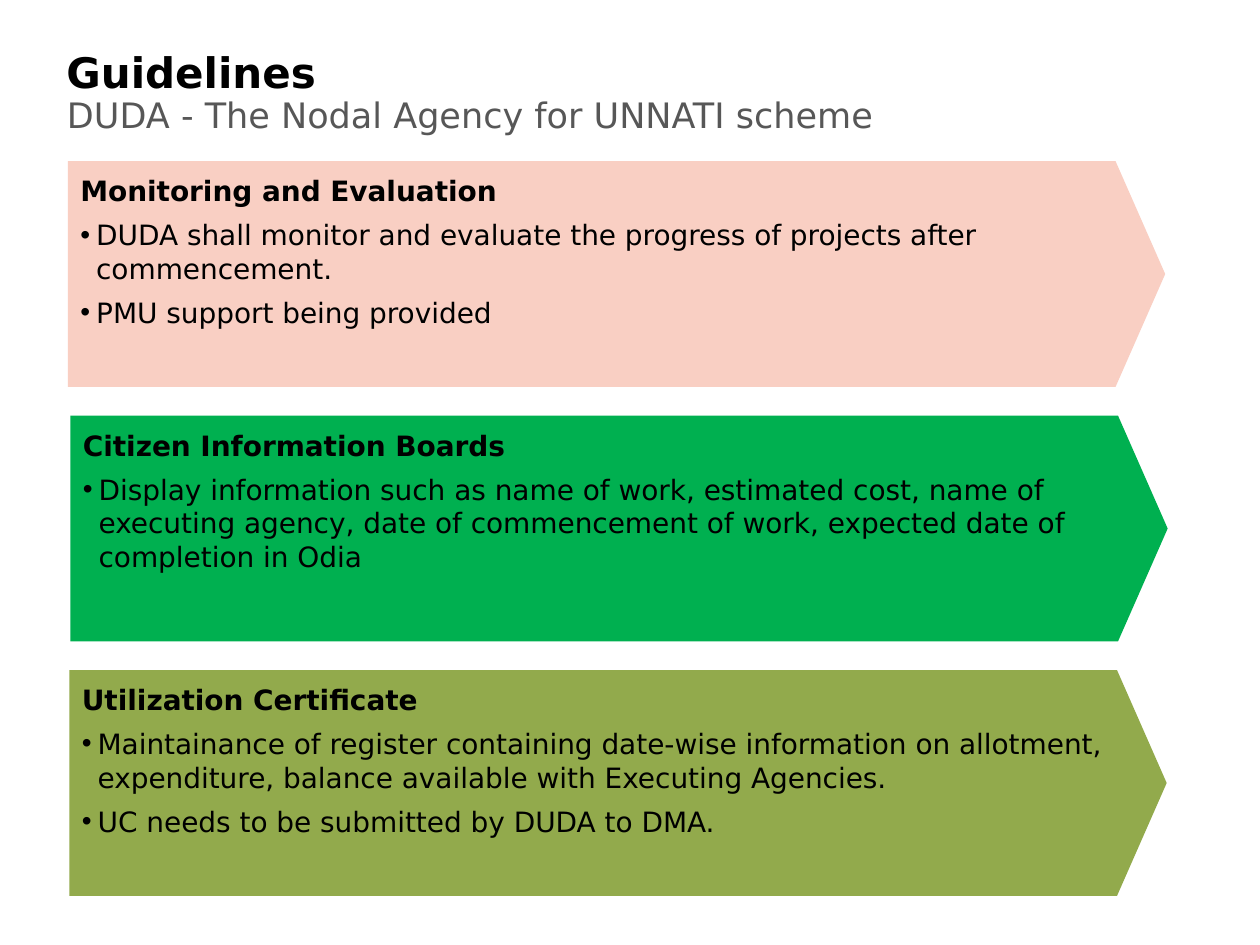
from lxml.etree import SubElement
from pptx import Presentation
from pptx.dml.color import RGBColor
from pptx.enum.shapes import MSO_SHAPE as Shape
from pptx.enum.text import MSO_ANCHOR as Anchor, MSO_AUTO_SIZE as AutoSize, PP_ALIGN as Align
from pptx.oxml.ns import qn
from pptx.util import Cm, Pt

FONT = "DejaVu Sans"
BLACK = RGBColor(0x00, 0x00, 0x00)
GREY = RGBColor(0x57, 0x57, 0x57)
PINK = RGBColor(0xF9, 0xCF, 0xC3)
GREEN = RGBColor(0x00, 0xB0, 0x50)
OLIVE = RGBColor(0x92, 0xAA, 0x4C)

ARROW_TOP = 3.25
ARROW_PITCH = 5.13
ARROWS = [
    (1.37, PINK, "Monitoring and Evaluation", [
        "DUDA shall monitor and evaluate the progress of projects after commencement.",
        "PMU support being provided",
    ]),
    (1.42, GREEN, "Citizen Information Boards", [
        "Display information such as name of work, estimated cost, name of executing agency, "
        "date of commencement of work, expected date of completion in Odia",
    ]),
    (1.4, OLIVE, "Utilization Certificate", [
        "Maintainance of register containing date-wise information on allotment, expenditure, "
        "balance available with Executing Agencies.",
        "UC needs to be submitted by DUDA to DMA.",
    ]),
]


def add_span(para, text, size, color=BLACK, bold=False):
    para.alignment = Align.LEFT
    span = para.add_run()
    span.text = text
    span.font.name = FONT
    span.font.size = Pt(size)
    span.font.bold = bold
    span.font.color.rgb = color


def set_frame(frame, side, upright):
    frame.word_wrap = True
    frame.auto_size = AutoSize.NONE
    frame.vertical_anchor = Anchor.TOP
    frame.margin_left = frame.margin_right = Cm(side)
    frame.margin_top = frame.margin_bottom = Cm(upright)


def add_bullet(para):
    properties = para._p.get_or_add_pPr()
    properties.set("marL", str(Cm(0.32)))
    properties.set("indent", str(Cm(-0.32)))
    SubElement(properties, qn("a:buFont"), typeface="Arial")
    SubElement(properties, qn("a:buChar"), char="•")


def format_title(page, text):
    title = page.shapes.title
    title.left, title.top, title.width, title.height = Cm(1.09), Cm(0.81), Cm(23.2), Cm(1.3)
    set_frame(title.text_frame, 0.25, 0.13)
    add_span(title.text_frame.paragraphs[0], text, 24, bold=True)


def add_subtitle(page, text):
    box = page.shapes.add_textbox(Cm(1.35), Cm(1.88), Cm(23.2), Cm(2.1))
    set_frame(box.text_frame, 0, 0)
    add_span(box.text_frame.paragraphs[0], text, 20, GREY)


def add_arrow(page, left, top, color, heading, points):
    arrow = page.shapes.add_shape(Shape.PENTAGON, Cm(left), Cm(top), Cm(22.12), Cm(4.55))
    arrow.adjustments[0] = 0.22
    arrow.shadow.inherit = False
    arrow.fill.solid()
    arrow.fill.fore_color.rgb = color
    arrow.line.fill.background()
    frame = arrow.text_frame
    set_frame(frame, 0.25, 0.25)
    para = frame.paragraphs[0]
    para.space_before = Pt(4)
    add_span(para, heading, 16, bold=True)
    for point in points:
        para = frame.add_paragraph()
        para.level = 1
        para.space_before = Pt(6)
        add_bullet(para)
        add_span(para, point, 16)


def main():
    deck = Presentation()
    deck.slide_width, deck.slide_height = Cm(25.4), Cm(19.05)
    page = deck.slides.add_slide(deck.slide_layouts.get_by_name("Title Only"))
    format_title(page, "Guidelines")
    add_subtitle(page, "DUDA - The Nodal Agency for UNNATI scheme")
    for row, (left, color, heading, points) in enumerate(ARROWS):
        add_arrow(page, left, ARROW_TOP + row * ARROW_PITCH, color, heading, points)
    deck.save("out.pptx")


if __name__ == "__main__":
    main()
